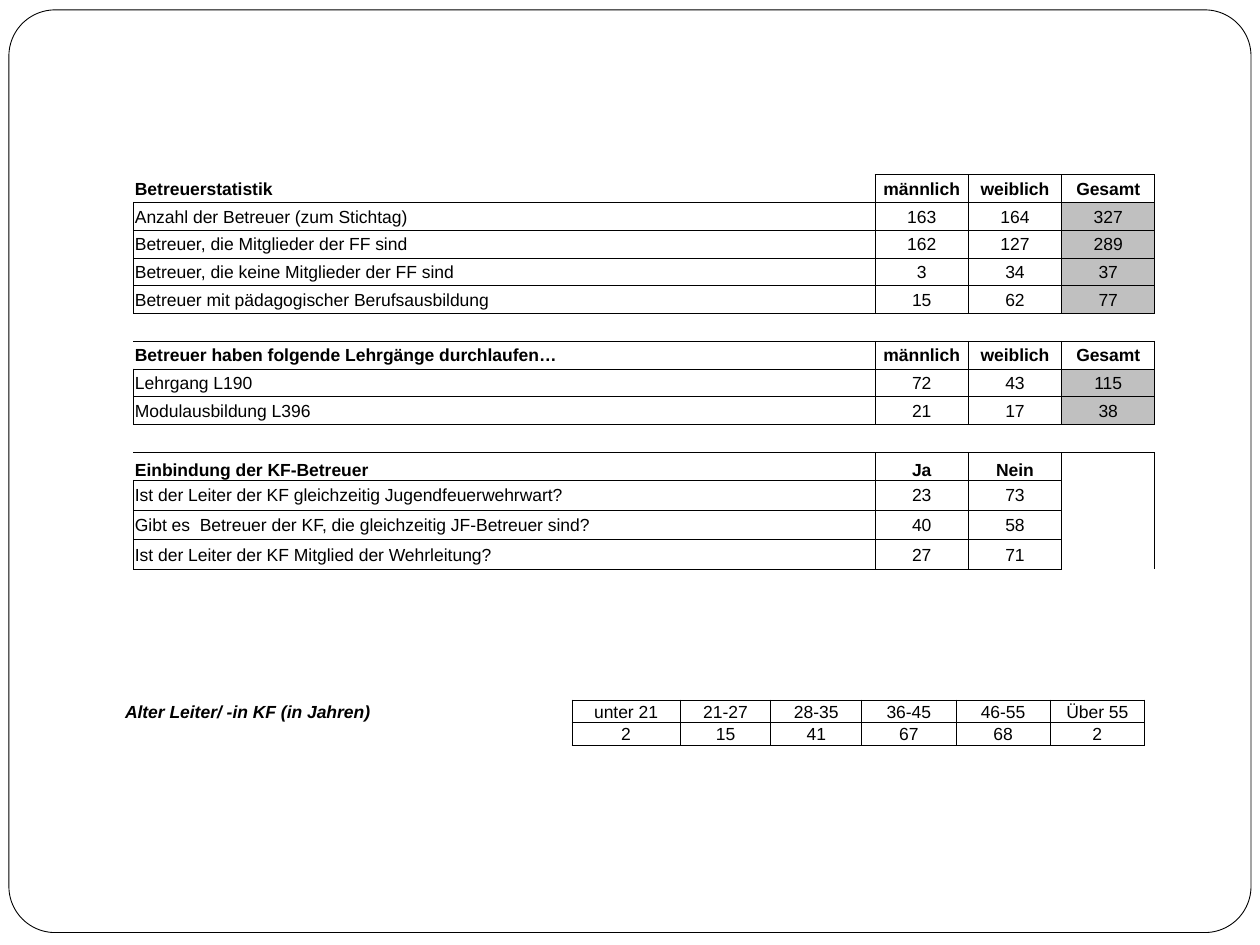
from lxml import etree
from pptx import Presentation
from pptx.dml.color import RGBColor
from pptx.enum.shapes import MSO_SHAPE
from pptx.enum.text import MSO_ANCHOR, PP_ALIGN
from pptx.oxml.ns import qn
from pptx.util import Cm, Pt

LEFT, CENTER = PP_ALIGN.LEFT, PP_ALIGN.CENTER
MIDDLE, BOTTOM = MSO_ANCHOR.MIDDLE, MSO_ANCHOR.BOTTOM
ROUNDED = MSO_SHAPE.ROUNDED_RECTANGLE
NO_GRID_STYLE = "{2D5ABB26-0587-4C30-8999-92F81FD0307C}"
COLORS = {"paper": "FFFFFF", "ink": "000000", "total": "C0C0C0"}
LINE_WIDTH = Pt(0.5)

# Content: (row kind, label, label span, values)
CARER_ROWS = [
    ("head", "Betreuerstatistik", 1, ["männlich", "weiblich", "Gesamt"]),
    ("data", "Anzahl der Betreuer (zum Stichtag)", 7, ["163", "164", "327"]),
    ("data", "Betreuer, die Mitglieder der FF sind", 7, ["162", "127", "289"]),
    ("data", "Betreuer, die keine Mitglieder der FF sind", 7, ["3", "34", "37"]),
    ("data", "Betreuer mit pädagogischer Berufsausbildung", 7, ["15", "62", "77"]),
    ("gap", "", 1, []),
    ("head", "Betreuer haben folgende Lehrgänge durchlaufen…", 5,
     ["männlich", "weiblich", "Gesamt"]),
    ("data", "Lehrgang L190", 7, ["72", "43", "115"]),
    ("data", "Modulausbildung L396", 7, ["21", "17", "38"]),
    ("gap", "", 1, []),
    ("low head", "Einbindung der KF-Betreuer", 2, ["Ja", "Nein"]),
    ("data", "Ist der Leiter der KF gleichzeitig Jugendfeuerwehrwart?", 7, ["23", "73"]),
    ("data", "Gibt es  Betreuer der KF, die gleichzeitig JF-Betreuer sind?", 7, ["40", "58"]),
    ("data", "Ist der Leiter der KF Mitglied der Wehrleitung?", 7, ["27", "71"]),
]
AGE_ROWS = [
    ("age head", "Alter Leiter/ -in KF (in Jahren)", 2,
     ["unter 21", "21-27", "28-35", "36-45", "46-55", "Über 55"]),
    ("age data", "", 1, ["2", "15", "41", "67", "68", "2"]),
]

# Row kinds: label font, value font, anchor, whether the label is boxed
PLAIN = {"bold": False, "italic": False}
BOLD = {"bold": True, "italic": False}
KINDS = {
    "head": (BOLD, BOLD, MIDDLE, False),
    "low head": (BOLD, BOLD, BOTTOM, False),
    "data": (PLAIN, PLAIN, MIDDLE, True),
    "gap": (PLAIN, PLAIN, MIDDLE, False),
    "age head": ({"bold": True, "italic": True}, PLAIN, BOTTOM, False),
    "age data": (PLAIN, PLAIN, MIDDLE, False),
}
FONT = {"name": "Arial", "size": Pt(10)}
MARGINS = {"margin_left": Cm(0.03), "margin_right": Cm(0.03),
           "margin_top": Cm(0.03), "margin_bottom": 0}
SIDES = {"lnL": (0, -1), "lnR": (0, 1), "lnT": (-1, 0), "lnB": (1, 0)}


def rgb(name):
    return RGBColor.from_string(COLORS[name])


def set_all(obj, values):
    for name, value in values.items():
        setattr(obj, name, value)


def add_border(cell, side):
    ln = etree.SubElement(cell._tc.get_or_add_tcPr(), qn(f"a:{side}"), w=str(LINE_WIDTH))
    fill = etree.SubElement(ln, qn("a:solidFill"))
    etree.SubElement(fill, qn("a:srgbClr"), val=COLORS["ink"])


def write(cell, text, font, align):
    p = cell.text_frame.paragraphs[0]
    p.alignment = align
    if not text:
        # Keeps empty cells from stretching their row
        etree.SubElement(p._p, qn("a:endParaRPr"), sz="1000")
        return
    r = p.add_run()
    r.text = text
    set_all(r.font, {**FONT, **font})
    r.font.color.rgb = rgb("ink")


def add_grid(slide, rows, left, top, widths, heights, first_value):
    tbl = slide.shapes.add_table(len(rows), len(widths), Cm(left), Cm(top),
                                 Cm(sum(widths)), Cm(sum(heights))).table
    set_all(tbl, {"first_row": False, "horz_banding": False})
    tbl._tbl.tblPr.find(qn("a:tableStyleId")).text = NO_GRID_STYLE
    for col, width in zip(tbl.columns, widths):
        col.width = Cm(width)
    for row, height in zip(tbl.rows, heights):
        row.height = Cm(height)

    # Boxed cells; neighbours share their edges
    boxed = set()
    for i, (kind, _, _, values) in enumerate(rows):
        start = 0 if KINDS[kind][3] else first_value
        boxed |= {(i, j) for j in range(start, first_value + len(values))}

    for i, (kind, label, span, values) in enumerate(rows):
        label_font, value_font, anchor, _ = KINDS[kind]
        texts = [label] + [""] * (first_value - 1) + values
        texts += [""] * (len(widths) - len(texts))
        for j, text in enumerate(texts):
            cell = tbl.cell(i, j)
            set_all(cell, {**MARGINS, "vertical_anchor": anchor})
            is_value = j >= first_value
            write(cell, text, value_font if is_value else label_font,
                  CENTER if is_value else LEFT)
            for side, (di, dj) in SIDES.items():
                if {(i, j), (i + di, j + dj)} & boxed:
                    add_border(cell, side)
            if kind == "data" and j - first_value == 2 and text:
                cell.fill.solid()
                cell.fill.fore_color.rgb = rgb("total")
            else:
                cell.fill.background()
        if span > 1:
            tbl.cell(i, 0).merge(tbl.cell(i, span - 1))


prs = Presentation()
prs.slide_width, prs.slide_height = Cm(25.4), Cm(19.05)
slide = prs.slides.add_slide(prs.slide_layouts[6])

# Rounded page frame
frame = slide.shapes.add_shape(ROUNDED, Cm(0.18), Cm(0.2), Cm(25.04), Cm(18.6))
frame.adjustments[0] = 0.05
frame.shadow.inherit = False
frame.fill.solid()
frame.fill.fore_color.rgb = rgb("paper")
frame.line.color.rgb = rgb("ink")
frame.line.width = LINE_WIDTH

# Carer statistics
add_grid(slide, CARER_ROWS, 2.69, 3.52,
         [3.8] + [1.8] * 3 + [2.15] + [1.8] * 2 + [1.88] * 3,
         [0.56] * 11 + [0.6] * 3, first_value=7)

# Age of the leaders
add_grid(slide, AGE_ROWS, 2.49, 14.11,
         [3.68, 1.7] + [1.83] * 2 + [2.18] + [1.83] * 2 + [1.9] * 3,
         [0.45] * 2, first_value=4)

prs.save("out.pptx")
